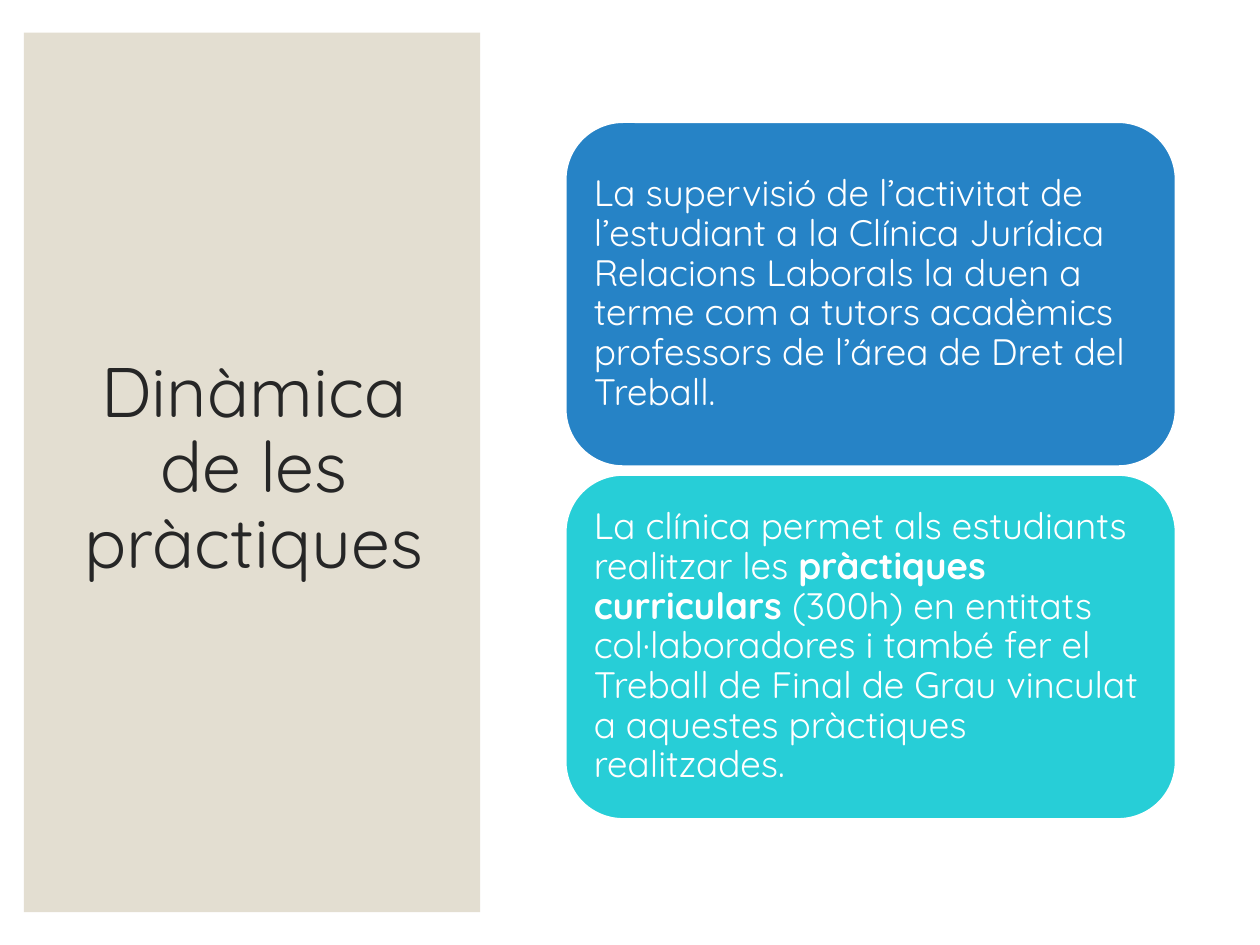
"""Build the slide on how the legal clinic placements work."""
from pptx import Presentation
from pptx.dml.color import RGBColor
from pptx.enum.shapes import MSO_SHAPE
from pptx.enum.text import MSO_ANCHOR, MSO_AUTO_SIZE, PP_ALIGN
from pptx.util import Inches, Pt

WHITE = RGBColor(0xFF, 0xFF, 0xFF)
SAND = RGBColor(0xE3, 0xDE, 0xD1)
INK = RGBColor(0x26, 0x26, 0x26)
BLUE = RGBColor(0x26, 0x83, 0xC6)
TURQUOISE = RGBColor(0x27, 0xCE, 0xD7)

CARD_TOP = 0.97
CARD_PITCH = 2.8
CARDS = [
    (BLUE, [
        ("La supervisió de l’activitat de l’estudiant a la Clínica Jurídica "
         "Relacions Laborals la duen a terme com a tutors acadèmics "
         "professors de l’área de Dret del Treball.", False),
    ]),
    (TURQUOISE, [
        ("La clínica permet als estudiants realitzar les ", False),
        ("pràctiques curriculars ", True),
        ("(300h) en entitats col·laboradores i també fer el Treball de Final "
         "de Grau vinculat a aquestes pràctiques realitzades.", False),
    ]),
]


class SlideBuilder:
    font_name = "Quicksand"
    line_spacing = 0.9

    def __init__(self, slide):
        self.slide = slide

    def format_run(self, run, size, color, bold=False):
        run.font.name = self.font_name
        run.font.size = Pt(size)
        run.font.color.rgb = color
        run.font.bold = bold

    def filled_shape(self, preset, left, top, width, height, fill):
        shape = self.slide.shapes.add_shape(
            preset, Inches(left), Inches(top), Inches(width), Inches(height))
        shape.shadow.inherit = False
        shape.fill.solid()
        shape.fill.fore_color.rgb = fill
        return shape

    def panel(self, left, top, width, height, fill):
        panel = self.filled_shape(
            MSO_SHAPE.RECTANGLE, left, top, width, height, fill)
        panel.line.fill.background()
        self.slide.shapes.title.element.addprevious(panel.element)

    def title(self, text, left, top, width, height):
        title = self.slide.shapes.title
        title.left, title.top = Inches(left), Inches(top)
        title.width, title.height = Inches(width), Inches(height)
        frame = title.text_frame
        frame.text = text
        frame.word_wrap = True
        frame.auto_size = MSO_AUTO_SIZE.NONE
        frame.vertical_anchor = MSO_ANCHOR.MIDDLE
        heading = frame.paragraphs[0]
        heading.alignment = PP_ALIGN.CENTER
        heading.line_spacing = self.line_spacing
        self.format_run(heading.runs[0], 40, INK)

    def card(self, left, top, width, height, fill, passages):
        card = self.filled_shape(
            MSO_SHAPE.ROUNDED_RECTANGLE, left, top, width, height, fill)
        card.line.color.rgb = WHITE
        card.line.width = Pt(1)
        frame = card.text_frame
        frame.word_wrap = True
        frame.vertical_anchor = MSO_ANCHOR.MIDDLE
        frame.margin_left = frame.margin_right = Inches(0.09)
        frame.margin_top = frame.margin_bottom = Inches(0.09)
        body = frame.paragraphs[0]
        body.alignment = PP_ALIGN.LEFT
        body.line_spacing = self.line_spacing
        body.space_after = Pt(7)
        for text, bold in passages:
            run = body.add_run()
            run.text = text
            self.format_run(run, 21, WHITE, bold)


def main():
    deck = Presentation()
    deck.slide_width, deck.slide_height = Inches(10), Inches(7.5)
    builder = SlideBuilder(deck.slides.add_slide(deck.slide_layouts[5]))
    builder.panel(0.19, 0.26, 3.62, 6.98, SAND)
    builder.title("Dinàmica de les pràctiques", 0.47, 0.61, 3.09, 6.24)
    for row, (fill, passages) in enumerate(CARDS):
        builder.card(4.49, CARD_TOP + row * CARD_PITCH, 4.84, 2.73,
                     fill, passages)
    deck.save("out.pptx")


if __name__ == "__main__":
    main()
